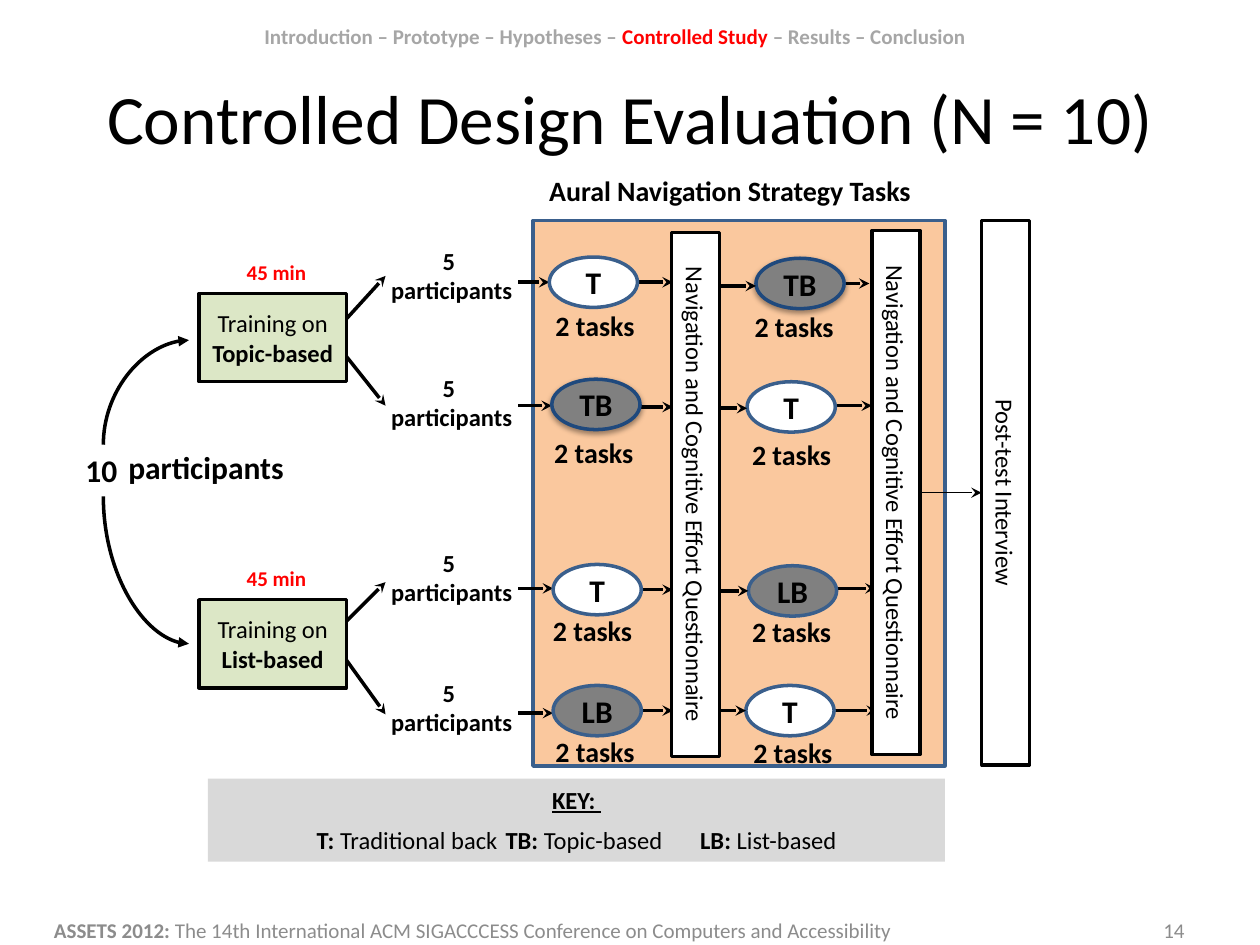
from collections import namedtuple

from lxml.etree import SubElement
from pptx import Presentation
from pptx.dml.color import RGBColor
from pptx.enum.shapes import MSO_CONNECTOR as Connector, MSO_SHAPE as Shape
from pptx.enum.text import MSO_ANCHOR as Anchor, PP_ALIGN as Align
from pptx.oxml.ns import qn
from pptx.util import Inches, Pt

COLUMNS = 100
SLIDE_WIDTH, SLIDE_HEIGHT = Inches(10), Inches(7.5)
CELL = SLIDE_WIDTH / COLUMNS
COLORS = {
    "black": "000000", "white": "FFFFFF", "red": "FF0000", "orange": "F79646",
    "green": "9BBB59", "blue": "3A5F8C", "navy": "1F497D", "gray": "808080",
    "key": "D9D9D9", "footer": "8C8C8C", "trail": "A6A6A6",
}
FLAT = dict(margin_left=0, margin_right=0, margin_top=0, margin_bottom=0)
BOLD = {"bold": True}
PLAIN = {"bold": False}

Stage = namedtuple("Stage", "code left top arrow_in arrow_out task_left task_top")
Group = namedtuple("Group", "top first second end")
GROUPS = [
    Group(19.5, Stage("T", 43.6, 20.4, 22.4, 22.4, 43.1, 24),
          Stage("TB", 60, 20.5, 22.7, 22.5, 58.9, 24.1), 69),
    Group(29.6, Stage("TB", 43.8, 30.1, 32.2, 32.3, 43, 34.1),
          Stage("T", 59.3, 30.3, 32.4, 32.2, 58.7, 34.2), 69.2),
    Group(43.5, Stage("T", 43.9, 44.8, 46.7, 46.8, 42.9, 48.2),
          Stage("LB", 59.4, 44.9, 46.9, 46.7, 58.7, 48.3), 69.5),
    Group(53.8, Stage("LB", 43.9, 54.4, 56.6, 56.4, 43.1, 57.8),
          Stage("T", 59.2, 54.4, 56.4, 56.4, 58.8, 57.9), 69.6),
]
TRAININGS = [
    ("Topic-based", 23.3, 20.1, [(25.3, 21.9), (28.3, 32.2)]),
    ("List-based", 47.6, 44.4, [(49.3, 46.2), (52.4, 56.7)]),
]


def grid(*cells):
    return [round(cell * CELL) for cell in cells]


def rgb(name):
    return RGBColor.from_string(COLORS[name])


def apply_format(target, values):
    for name, value in values.items():
        if name == "color":
            target.color.rgb = rgb(value)
        else:
            setattr(target, name, value)


def write(shape, paragraphs, size, color="black", align=Align.LEFT,
          anchor=Anchor.TOP, spacing=0, **frame_format):
    frame = shape.text_frame
    apply_format(frame, {"word_wrap": True, "vertical_anchor": anchor, **frame_format})
    for index, runs in enumerate(paragraphs):
        paragraph = frame.paragraphs[0] if index == 0 else frame.add_paragraph()
        apply_format(paragraph, {"alignment": align, "space_after": Pt(spacing)})
        for text, run_format in runs:
            run = paragraph.add_run()
            run.text = text
            apply_format(run.font, {"name": "Calibri", "size": Pt(size),
                                    "color": color, **run_format})


def add_label(slide, box, paragraphs, size, **options):
    write(slide.shapes.add_textbox(*grid(*box)), paragraphs, size, **options)


def add_block(slide, kind, box, fill, line=None, opacity=None):
    shape = slide.shapes.add_shape(kind, *grid(*box))
    shape.shadow.inherit = False
    shape.fill.solid()
    shape.fill.fore_color.rgb = rgb(fill)
    if opacity:
        color = shape.element.spPr.find(f"{qn('a:solidFill')}/{qn('a:srgbClr')}")
        SubElement(color, qn("a:alpha"), val=str(opacity * 1000))
    if line:
        shape.line.color.rgb = rgb(line)
        shape.line.width = Pt(2)
    else:
        shape.line.fill.background()
    return shape


def add_arrow(slide, start, end, width=2, kind=Connector.STRAIGHT,
              tip="tailEnd", head="stealth"):
    connector = slide.shapes.add_connector(kind, *grid(*start, *end))
    connector.line.color.rgb = rgb("black")
    connector.line.width = Pt(width)
    properties = connector.element.spPr
    SubElement(properties.find(qn("a:ln")), qn(f"a:{tip}"), type=head)
    SubElement(properties, qn("a:effectLst"))
    return connector


def add_arc(slide, tip, start):
    connector = add_arrow(slide, tip, start, kind=Connector.CURVE,
                          tip="headEnd", head="triangle")
    connector.element.spPr.find(qn("a:prstGeom")).set("prst", "curvedConnector2")


def add_soft_shadow(shape):
    effects = shape.element.spPr.find(qn("a:effectLst"))
    shadow = SubElement(effects, qn("a:outerShdw"), blurRad=str(Pt(3.1)),
                        dist=str(Pt(1.6)), dir="5400000", rotWithShape="0")
    color = SubElement(shadow, qn("a:srgbClr"), val=COLORS["black"])
    SubElement(color, qn("a:alpha"), val="38000")


def add_stage(slide, stage):
    topic = stage.code == "TB"
    ellipse = add_block(slide, Shape.OVAL, (stage.left, stage.top, 7, 4),
                        "white" if stage.code == "T" else "gray",
                        "navy" if topic else "blue")
    if topic:
        add_soft_shadow(ellipse)
    write(ellipse, [[(stage.code, BOLD)]], 18, align=Align.CENTER,
          anchor=Anchor.MIDDLE, **FLAT)


def add_bar(slide, text, center, middle, length):
    thickness = 3.8
    box = (center - length / 2, middle - thickness / 2, length, thickness)
    bar = add_block(slide, Shape.RECTANGLE, box, "white", "black")
    bar.rotation = 90
    write(bar, [[(text, {})]], 14, align=Align.CENTER, anchor=Anchor.MIDDLE, **FLAT)


def add_group_flow(slide, group):
    first, second = group.first, group.second
    add_arrow(slide, (41, first.arrow_in), (first.left, first.arrow_in))
    add_arrow(slide, (first.left + 7, first.arrow_out), (53.4, first.arrow_out))
    add_arrow(slide, (66, second.arrow_out), (group.end, second.arrow_out))
    for stage in (first, second):
        add_stage(slide, stage)
    add_arrow(slide, (57.1, second.arrow_in), (second.left, second.arrow_in))
    box = add_block(slide, Shape.RECTANGLE, (30.6, group.top, 10.5, 5.6), "white")
    write(box, [[("5 ", BOLD)], [("participants", BOLD)]], 14,
          align=Align.CENTER, **FLAT)


def add_training(slide, name, top, time_top, branches):
    box = add_block(slide, Shape.RECTANGLE, (15.8, top, 11.7, 7), "green", "black", 34)
    write(box, [[("Training on ", {}), (name, BOLD)]], 14,
          align=Align.CENTER, anchor=Anchor.MIDDLE, **FLAT)
    add_label(slide, (18.6, time_top, 7.3, 4), [[("45 min", BOLD)]], 12, color="red")
    for start, end in branches:
        add_arrow(slide, (27.5, start), (30.6, end))


def add_key(slide):
    key = add_block(slide, Shape.RECTANGLE, (16.5, 61.8, 58.5, 6.6), "key")
    entries = [("T: ", BOLD), ("Traditional back \t", PLAIN), ("TB: ", BOLD),
               ("Topic-based\t ", PLAIN), ("LB: ", BOLD), ("List-based", PLAIN)]
    write(key, [[("KEY: ", {"bold": True, "underline": True})], entries], 14,
          align=Align.CENTER, spacing=6)


def add_page_text(slide):
    middle = {"anchor": Anchor.MIDDLE}
    add_label(slide, (5, 3, 90, 12.5), [[("Controlled Design Evaluation (N = 10)", {})]],
              39.6, align=Align.CENTER, **middle)
    add_label(slide, (20, 0.8, 62.5, 4.2), [[
        ("Introduction – Prototype – Hypotheses – ", BOLD),
        ("Controlled Study", {"bold": True, "color": "red"}),
        (" – Results – Conclusion", BOLD)]], 12, color="trail", **middle)
    add_label(slide, (3.3, 71.8, 74.2, 4), [[
        ("ASSETS 2012: ", BOLD),
        ("The 14th International ACM SIGACCCESS Conference on Computers "
         "and Accessibility", PLAIN)]], 12, color="footer", **middle)
    add_label(slide, (71.7, 71.8, 23.3, 4), [[("14", {})]], 12,
              color="footer", align=Align.RIGHT, **middle)


def main():
    presentation = Presentation()
    presentation.slide_width, presentation.slide_height = SLIDE_WIDTH, SLIDE_HEIGHT
    slide = presentation.slides.add_slide(presentation.slide_layouts[6])
    add_page_text(slide)
    add_block(slide, Shape.RECTANGLE, (42.3, 17.5, 32.7, 43.3), "orange", "blue", 52)
    add_label(slide, (42.6, 13.3, 38.9, 3.7),
              [[("Aural Navigation Strategy Tasks", BOLD)]], 16)
    for group in GROUPS:
        add_group_flow(slide, group)
    for training in TRAININGS:
        add_training(slide, *training)
    for center, middle in ((55.2, 39.25), (71.1, 39.1)):
        add_bar(slide, "Navigation and Cognitive Effort Questionnaire", center, middle, 41.6)
    add_bar(slide, "Post-test Interview", 79.8, 39.1, 43.2)
    add_arrow(slide, (73, 39.1), (77.9, 39.1), width=0.75)
    for group in GROUPS:
        for stage in (group.first, group.second):
            add_label(slide, (stage.task_left, stage.task_top, 8.9, 3.7),
                      [[("2 tasks", BOLD)]], 16)
    add_key(slide)
    add_label(slide, (9.2, 35.1, 15.6, 4), [[("participants", BOLD)]], 18)
    add_label(slide, (5.8, 35.3, 4.8, 4), [[("10", BOLD)]], 18)
    add_arc(slide, (15, 27), (8.2, 35.3))
    add_arc(slide, (15, 51.1), (8.2, 39.4))
    presentation.save("out.pptx")


if __name__ == "__main__":
    main()
